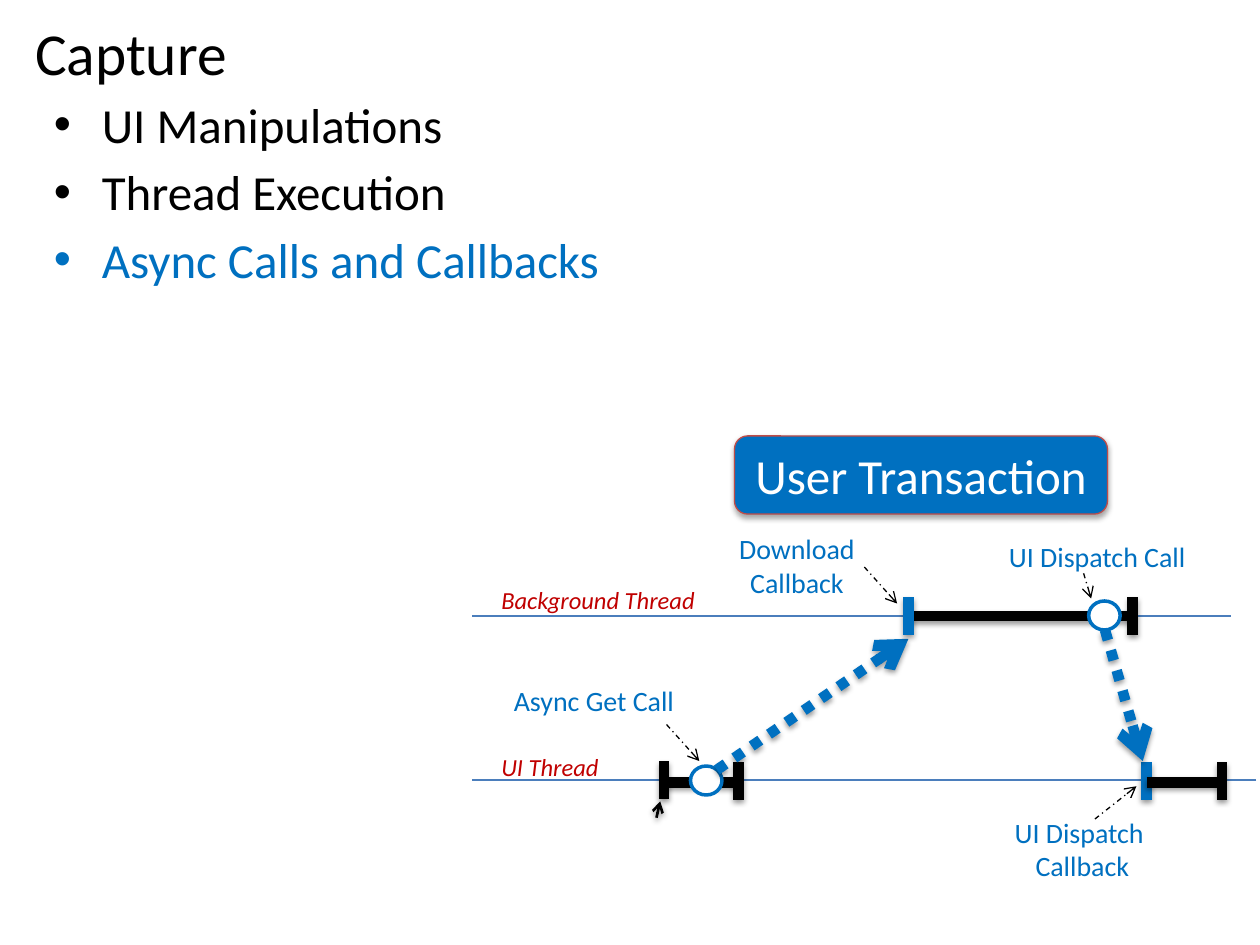
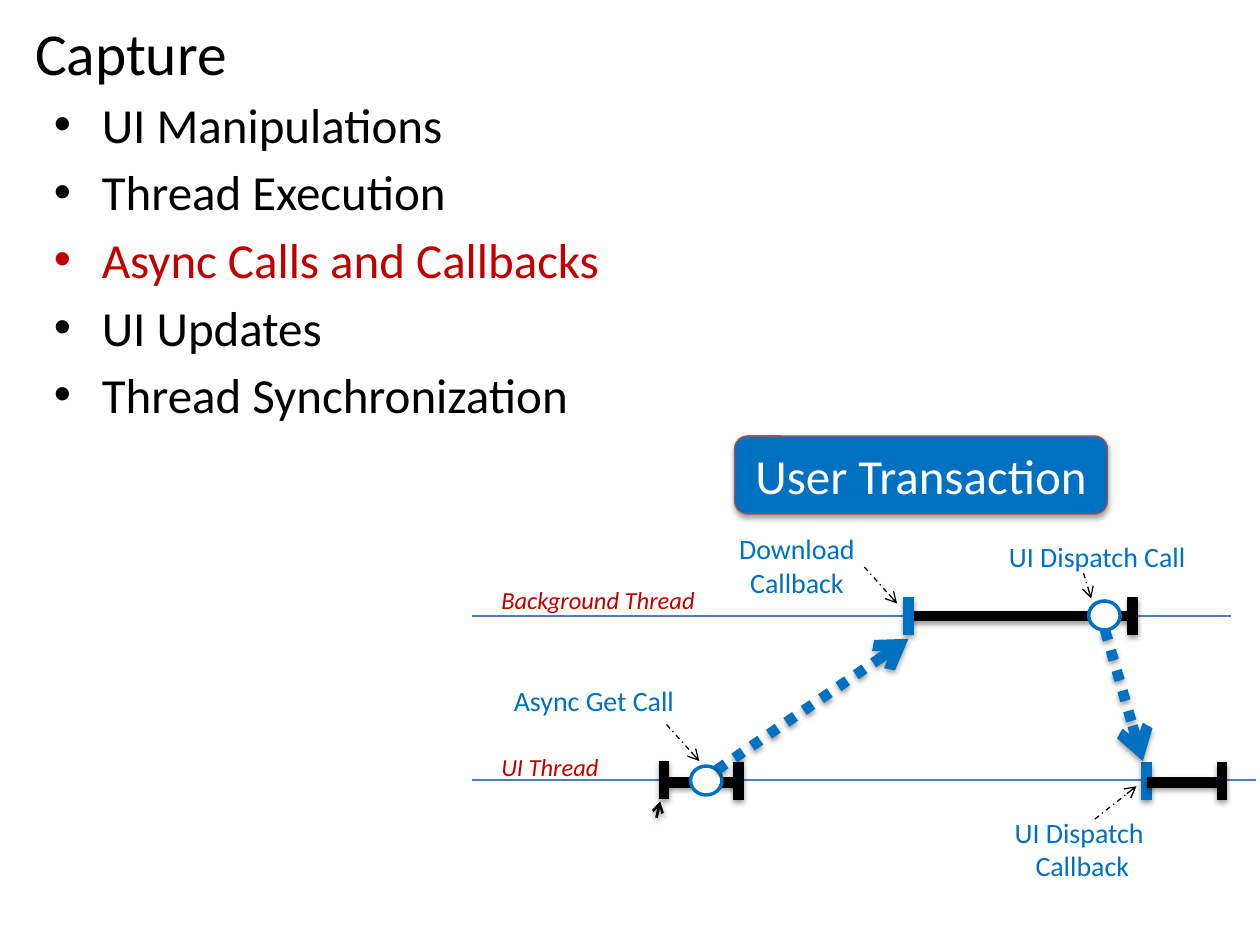
from lxml import etree
from pptx import Presentation
from pptx.dml.color import RGBColor
from pptx.enum.dml import MSO_LINE
from pptx.enum.shapes import MSO_CONNECTOR, MSO_SHAPE
from pptx.enum.text import MSO_ANCHOR, MSO_AUTO_SIZE, PP_ALIGN
from pptx.oxml.ns import qn
from pptx.util import Inches, Pt

STRAIGHT = MSO_CONNECTOR.STRAIGHT
ROUND, OVAL = MSO_SHAPE.ROUNDED_RECTANGLE, MSO_SHAPE.OVAL
DASH_DOT, DOTS = MSO_LINE.DASH_DOT, MSO_LINE.ROUND_DOT
LEFT, CENTER = PP_ALIGN.LEFT, PP_ALIGN.CENTER
MIDDLE, GROW = MSO_ANCHOR.MIDDLE, MSO_AUTO_SIZE.SHAPE_TO_FIT_TEXT

FONT = "Calibri"
BLACK, WHITE, BLUE, RED = "000000", "FFFFFF", "0070C0", "C00000"
RULE, EDGE = "4B7EBC", "BF4C48"
BACK_Y, UI_Y = 4.89, 6.19   # heights of the two thread lines
TICK = 0.15                 # half the height of a tick

TOPICS = ["UI Manipulations", "Thread Execution", "Async Calls and Callbacks",
          "UI Updates", "Thread Synchronization"]
FOCUS = TOPICS[2]

CALLS = [
    (3.98, 5.38, 1.52, 0.37, ["Async Get Call"], LEFT),
    (7.91, 4.23, 1.66, 0.37, ["UI Dispatch Call"], LEFT),
    (7.93, 6.42, 1.32, 0.64, ["UI Dispatch ", "Callback"], CENTER),
    (5.75, 4.17, 1.15, 0.64, ["Download", "Callback"], CENTER),
]
HINTS = [
    ((5.29, 5.75), (5.55, 6.04)),
    ((6.86, 4.5), (7.12, 4.79)),
    ((8.6, 4.55), (8.66, 4.75)),
    ((8.69, 6.5), (9.02, 6.24)),
]


def rgb(code):
    return RGBColor.from_string(code)


def box(at):
    return [Inches(n) for n in at]


def add_run(para, text, size, hue, slant=False):
    run = para.add_run()
    run.text = text
    font = run.font
    font.name, font.size, font.italic = FONT, Pt(size), slant
    font.color.rgb = rgb(hue)


def shade(shape, alpha=38, dist=1.6):
    """Drop a soft black shadow straight below the shape."""
    props = shape._element.spPr
    fx = props.find(qn("a:effectLst"))
    if fx is None:
        fx = etree.SubElement(props, qn("a:effectLst"))
    drop = etree.SubElement(fx, qn("a:outerShdw"), blurRad=str(Pt(3.1)),
                            dist=str(Pt(dist)), dir="5400000", rotWithShape="0")
    tint = etree.SubElement(drop, qn("a:srgbClr"), val=BLACK)
    etree.SubElement(tint, qn("a:alpha"), val=str(alpha * 1000))


def add_line(slide, start, end, hue=BLACK, width=0.75, dash=None,
             arrow=False, shadow=False):
    link = slide.shapes.add_connector(STRAIGHT, *box(start + end))
    line = link.line
    line.color.rgb, line.width = rgb(hue), Pt(width)
    if dash is not None:
        line.dash_style = dash
    if arrow:
        etree.SubElement(link._element.spPr.find(qn("a:ln")),
                         qn("a:tailEnd"), type="arrow")
    etree.SubElement(link._element.spPr, qn("a:effectLst"))
    if shadow:
        shade(link)


def add_label(slide, at, lines, size, hue, align=LEFT, slant=False):
    frame = slide.shapes.add_textbox(*box(at)).text_frame
    frame.word_wrap, frame.auto_size = False, GROW
    for i, text in enumerate(lines):
        para = frame.add_paragraph() if i else frame.paragraphs[0]
        para.alignment = align
        add_run(para, text, size, hue, slant)


def add_shape(slide, kind, at, fill, edge, width):
    shape = slide.shapes.add_shape(kind, *box(at))
    shape.shadow.inherit = False
    shape.fill.solid()
    shape.fill.fore_color.rgb = rgb(fill)
    shape.line.color.rgb, shape.line.width = rgb(edge), Pt(width)
    return shape


def add_list(slide, topics, accent):
    frame = slide.shapes.add_textbox(*box((0.33, 0.7, 6.58, 3.58))).text_frame
    frame.word_wrap = True
    for i, topic in enumerate(topics):
        para = frame.add_paragraph() if i else frame.paragraphs[0]
        para.space_before = Pt(5)
        props = para._p.get_or_add_pPr()
        props.set("marL", str(Inches(0.38)))
        props.set("indent", str(-Inches(0.38)))
        etree.SubElement(props, qn("a:buFont"), typeface="Arial")
        etree.SubElement(props, qn("a:buChar"), char="•")
        add_run(para, topic, 28, accent if topic == FOCUS else BLACK)


def add_badge(slide):
    badge = add_shape(slide, ROUND, (5.83, 3.46, 2.96, 0.62), BLUE, EDGE, 0.75)
    shade(badge, 35, 1.8)
    frame = badge.text_frame
    frame.word_wrap, frame.vertical_anchor = True, MIDDLE
    frame.paragraphs[0].alignment = CENTER
    add_run(frame.paragraphs[0], "User Transaction", 28, WHITE)


def add_tick(slide, x, y, hue=BLACK):
    add_line(slide, (x, y - TICK), (x, y + TICK), hue, 6, shadow=True)


def add_span(slide, left, right, y):
    add_line(slide, (left, y), (right, y), width=6, shadow=True)


def add_call(slide, left, top):
    add_shape(slide, OVAL, (left, top, 0.25, 0.23), WHITE, BLUE, 2)


def add_jump(slide, start, end):
    """Draw the dotted arrow from an async call to its callback."""
    add_line(slide, start, end, BLUE, 6, DOTS, arrow=True, shadow=True)


def add_flow(slide):
    for *at, lines, align in CALLS:
        add_label(slide, at, lines, 16, BLUE, align)
    for start, end in HINTS:
        add_line(slide, start, end, dash=DASH_DOT, arrow=True)
    add_badge(slide)
    for right, y in ((9.77, BACK_Y), (9.97, UI_Y)):
        add_line(slide, (right, y), (3.75, y), RULE)

    add_tick(slide, 5.27, UI_Y)
    add_span(slide, 5.29, 5.86, 6.21)
    add_tick(slide, 5.86, 6.2)
    add_tick(slide, 9.1, 6.2, BLUE)
    add_span(slide, 9.1, 9.68, 6.21)
    add_tick(slide, 9.7, 6.2)
    add_call(slide, 5.48, 6.08)

    add_line(slide, (5.21, 6.49), (5.24, 6.36), width=1.5,
             arrow=True, shadow=True)
    add_jump(slide, (5.69, 6.11), (7.21, 5.07))
    add_jump(slide, (8.77, 5), (9.07, 6.04))

    add_span(slide, 7.2, 8.99, BACK_Y)
    add_call(slide, 8.64, 4.77)
    add_tick(slide, 8.99, BACK_Y)
    add_label(slide, (3.88, 5.92, 0.99, 0.34), ["UI Thread"], 14, RED, slant=True)
    add_label(slide, (3.88, 4.59, 1.78, 0.34), ["Background Thread"], 14, RED,
              slant=True)
    add_tick(slide, 7.21, BACK_Y, BLUE)


def main():
    deck = Presentation()
    deck.slide_width, deck.slide_height = Inches(10), Inches(7.5)
    for count, accent in ((3, BLUE), (5, RED)):
        slide = deck.slides.add_slide(deck.slide_layouts[6])
        add_list(slide, TOPICS[:count], accent)
        add_label(slide, (0.18, 0.08, 1.74, 0.67), ["Capture"], 34, BLACK)
        add_flow(slide)
    deck.save("out.pptx")


if __name__ == "__main__":
    main()
